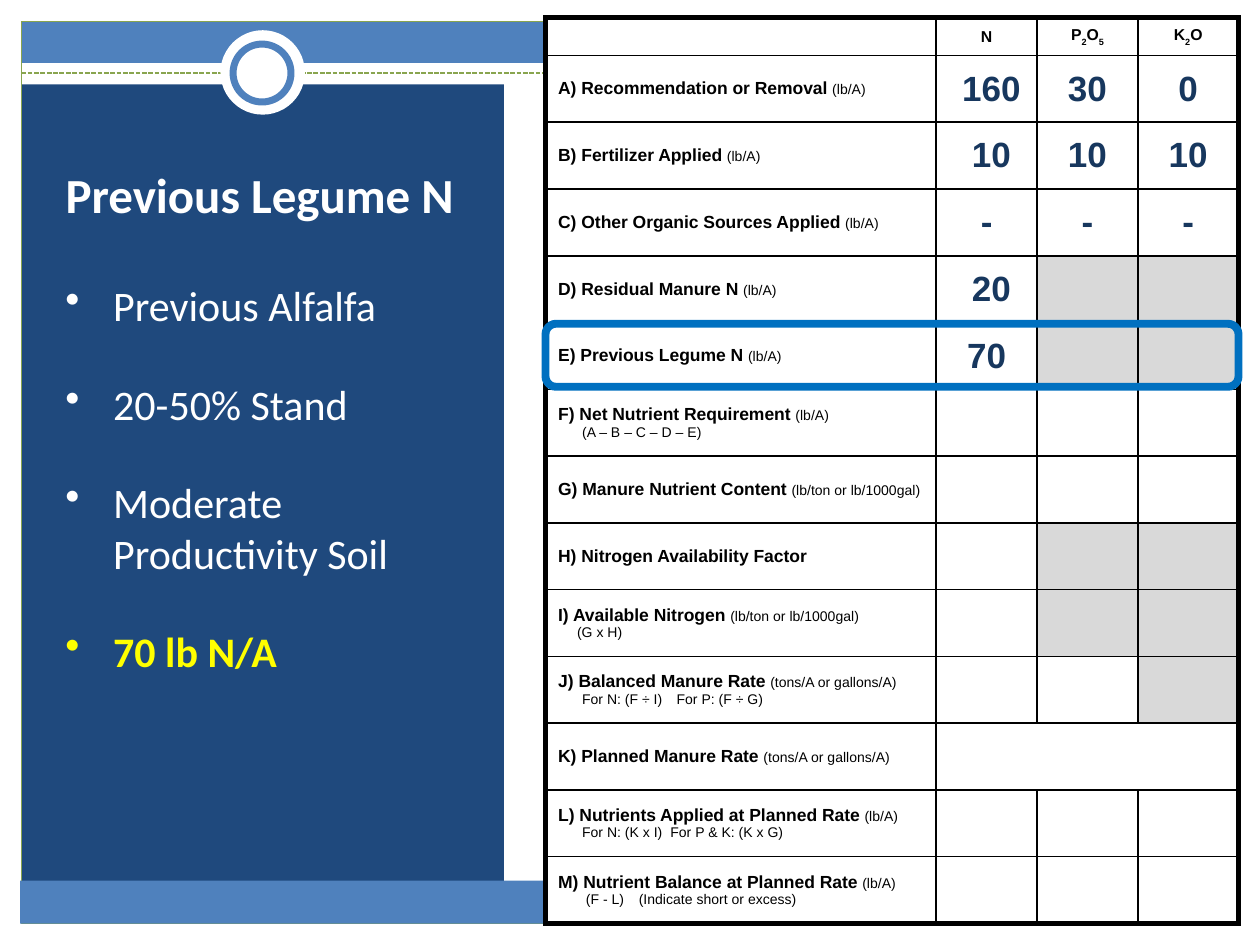
import pptx
import pptx.dml.color
import pptx.enum.dml
import pptx.enum.shapes
import pptx.enum.text
import pptx.oxml.ns
import pptx.util
from lxml import etree

Inches, Pt = pptx.util.Inches, pptx.util.Pt
Shape = pptx.enum.shapes.MSO_SHAPE
Align = pptx.enum.text.PP_ALIGN
Anchor = pptx.enum.text.MSO_ANCHOR
qn = pptx.oxml.ns.qn

BLUE, NAVY, GREEN, WHITE, BLACK = "4F81BD", "1F497D", "89A54F", "FFFFFF", "000000"
AMOUNT, GREY, YELLOW, HIGHLIGHT = "17375E", "D9D9D9", "FFFF00", "0070C0"

LB, PER_TON, MANURE = "(lb/A)", "(lb/ton or lb/1000gal)", "(tons/A or gallons/A)"
BULLETS = ["Previous Alfalfa", "20-50% Stand", "Moderate Productivity Soil", "70 lb N/A"]
# Digits in the headings are subscripts.
NUTRIENTS = ["N", "P2O5", "K2O"]
# Label, unit, note, tab stops of the note, amounts, number of grey cells at the right
WORKSHEET = [
    ("A) Recommendation or Removal ", LB, "", (), (" 160", "30", "0"), 0),
    ("B) Fertilizer Applied ", LB, "", (), (" 10", "10", "10"), 0),
    ("C) Other Organic Sources Applied ", LB, "", (), ("-", "-", "-"), 0),
    ("D) Residual Manure N ", LB, "", (), (" 20",), 2),
    ("E) Previous Legume N ", LB, "", (), ("70",), 2),
    ("F) Net Nutrient Requirement ", LB, "\t(A – B – C – D – E)", (0.19,), (), 0),
    ("G) Manure Nutrient Content ", PER_TON, "", (), (), 0),
    ("H) Nitrogen Availability Factor", "", "", (), (), 2),
    ("I) Available Nitrogen ", PER_TON, "\t(G x H)", (0.15,), (), 2),
    ("J) Balanced Manure Rate ", MANURE, "\tFor N: (F ÷ I)\tFor P: (F ÷ G)", (0.19, 0.94), (), 1),
    ("K) Planned Manure Rate ", MANURE, "", (), (), 0),
    ("L) Nutrients Applied at Planned Rate ", LB,
     "\tFor N: (K x I)\tFor P & K: (K x G)", (0.19, 0.89), (), 0),
    ("M) Nutrient Balance at Planned Rate ", LB,
     "\t(F - L)\t(Indicate short or excess)", (0.22, 0.64), (), 0),
]
PLANNED_RATE_ROW = 11


def rgb(value):
    return pptx.dml.color.RGBColor.from_string(value)


def style(font, name, size, color, bold=False):
    font.name, font.size, font.bold = name, Pt(size), bold
    font.color.rgb = rgb(color)


def set_end_size(paragraph, size):
    """Size the paragraph mark, which sets the bullet and the height of an empty line."""
    etree.SubElement(paragraph._p, qn("a:endParaRPr"), sz=str(size * 100))


def set_tabs(paragraph, stops):
    tabs = etree.SubElement(paragraph._p.get_or_add_pPr(), qn("a:tabLst"))
    for stop in stops:
        etree.SubElement(tabs, qn("a:tab"), pos=str(Inches(stop)), algn="l")


def set_borders(cell, widths):
    """Draw black borders; widths maps the side letters L, R, T and B to points."""
    properties = cell._tc.get_or_add_tcPr()
    for index, (side, width) in enumerate(widths.items()):
        border = etree.Element(qn("a:ln" + side), w=str(Pt(width)))
        fill = etree.SubElement(border, qn("a:solidFill"))
        etree.SubElement(fill, qn("a:srgbClr"), val=BLACK)
        properties.insert(index, border)


class WorksheetSlide:
    """Holds the slide and the fonts of its two halves."""
    panel_font = "Calibri"
    table_font = "Arial"

    def __init__(self, presentation):
        self.slide = presentation.slides.add_slide(presentation.slide_layouts[5])
        self.shapes = self.slide.shapes

    def shape(self, kind, left, top, width, height, fill=None, line=None, weight=0.75):
        shape = self.shapes.add_shape(kind, *map(Inches, (left, top, width, height)))
        shape.shadow.inherit = False
        if fill:
            shape.fill.solid()
            shape.fill.fore_color.rgb = rgb(fill)
        else:
            shape.fill.background()
        if line:
            shape.line.color.rgb = rgb(line)
            shape.line.width = Pt(weight)
        else:
            shape.line.fill.background()

    def dashed_line(self, left, right, y, color, weight):
        line = self.shapes.add_connector(
            pptx.enum.shapes.MSO_CONNECTOR.STRAIGHT,
            Inches(left), Inches(y), Inches(right), Inches(y))
        line.line.color.rgb = rgb(color)
        line.line.width = Pt(weight)
        line.line.dash_style = pptx.enum.dml.MSO_LINE.SQUARE_DOT
        etree.SubElement(line._element.spPr, qn("a:effectLst"))

    def title(self, text, left, top, width, height):
        title = self.shapes.title
        title.left, title.top, title.width, title.height = map(
            Inches, (left, top, width, height))
        title.element.getparent().append(title.element)  # in front of the panel
        frame = title.text_frame
        frame.text = text
        frame.auto_size = pptx.enum.text.MSO_AUTO_SIZE.NONE
        frame.vertical_anchor = Anchor.MIDDLE
        frame.paragraphs[0].alignment = Align.LEFT
        style(frame.paragraphs[0].font, self.panel_font, 28, WHITE, True)

    def bullets(self, items, left, top, width, height):
        """List the items, the last one being the highlighted result."""
        frame = self.shapes.add_textbox(*map(Inches, (left, top, width, height))).text_frame
        frame.word_wrap = True
        for index, item in enumerate(items):
            paragraph = frame.paragraphs[0] if index == 0 else frame.add_paragraph()
            paragraph.text = item
            paragraph.space_after = Pt(27.5)
            is_result = item == items[-1]
            style(paragraph.font, self.panel_font, 24, YELLOW if is_result else WHITE, is_result)
            set_end_size(paragraph, 24)
            properties = paragraph._p.get_or_add_pPr()
            properties.set("marL", str(Inches(0.38)))
            properties.set("indent", str(-Inches(0.38)))
            bullet = etree.Element(qn("a:buChar"), char="•")
            properties.find(qn("a:defRPr")).addprevious(bullet)

    def heading(self, cell, text):
        paragraph = cell.text_frame.paragraphs[0]
        paragraph.alignment = Align.CENTER
        for symbol in text:
            run = paragraph.add_run()
            run.text = symbol
            style(run.font, self.table_font, 9, BLACK, True)
            if symbol.isdigit():
                run._r.get_or_add_rPr().set("baseline", "-30000")

    def label(self, cell, name, unit, note, stops):
        paragraph = cell.text_frame.paragraphs[0]
        for text, size, bold in ((name, 10, True), (unit, 8, False)):
            if text:
                run = paragraph.add_run()
                run.text = text
                style(run.font, self.table_font, size, BLACK, bold)
        if note:
            paragraph = cell.text_frame.add_paragraph()
            set_tabs(paragraph, stops)
            run = paragraph.add_run()
            run.text = note
            style(run.font, self.table_font, 8, BLACK)

    def amount(self, cell, text):
        paragraph = cell.text_frame.paragraphs[0]
        paragraph.text = text
        paragraph.alignment = Align.CENTER
        style(paragraph.font, self.table_font, 20, AMOUNT, True)

    def worksheet(self, left, top, width, height):
        table = self.shapes.add_table(
            len(WORKSHEET) + 1, 4, *map(Inches, (left, top, width, height))).table
        table.first_row = table.horz_banding = False
        for column, size in zip(table.columns, (3.1, 0.8, 0.8, 0.8)):
            column.width = Inches(size)
        for index, row in enumerate(table.rows):
            row.height = Inches(0.53 if index else 0.3)
        table.cell(PLANNED_RATE_ROW, 1).merge(table.cell(PLANNED_RATE_ROW, 3))

        set_end_size(table.cell(0, 0).text_frame.paragraphs[0], 9)
        for column, nutrient in enumerate(NUTRIENTS, 1):
            self.heading(table.cell(0, column), nutrient)
        for row, (name, unit, note, stops, amounts, _) in enumerate(WORKSHEET, 1):
            self.label(table.cell(row, 0), name, unit, note, stops)
            for column, amount in enumerate(amounts, 1):
                self.amount(table.cell(row, column), amount)

        grey_counts = [0] + [entry[-1] for entry in WORKSHEET]
        for row, grey_count in enumerate(grey_counts):
            for column in range(4):
                cell = table.cell(row, column)
                cell.vertical_anchor = Anchor.MIDDLE
                cell.fill.solid()
                cell.fill.fore_color.rgb = rgb(GREY if column >= 4 - grey_count else WHITE)
                set_borders(cell, {
                    "L": 3 if column == 0 else 1,
                    "R": 3 if column + cell.span_width == 4 else 1,
                    "T": 3 if row == 0 else 1,
                    "B": 3 if row == len(WORKSHEET) else 1})


def main():
    presentation = pptx.Presentation()
    presentation.slide_width, presentation.slide_height = Inches(10), Inches(7.5)
    page = WorksheetSlide(presentation)
    page.shape(Shape.RECTANGLE, 0.17, 0.17, 9.66, 0.33, BLUE)
    page.shape(Shape.RECTANGLE, 0.17, 0.67, 3.83, 6.42, NAVY)
    page.shape(Shape.RECTANGLE, 0.17, 0.17, 9.66, 7.16, line=GREEN)
    page.dashed_line(0.17, 9.83, 0.58, GREEN, 0.9)
    page.shape(Shape.OVAL, 1.75, 0.24, 0.67, 0.67, WHITE)
    page.shape(Shape.OVAL, 1.85, 0.35, 0.46, 0.46, WHITE, BLUE, 4)
    page.shape(Shape.RECTANGLE, 0.16, 6.99, 9.66, 0.34, BLUE)
    page.title("Previous Legume N", 0.42, 1, 3.32, 1.08)
    page.bullets(BULLETS, 0.42, 2.17, 3.32, 4.53)
    page.worksheet(4.33, 0.14, 5.5, 7.19)
    page.shape(Shape.ROUNDED_RECTANGLE, 4.33, 2.57, 5.5, 0.5, line=HIGHLIGHT, weight=4.5)
    presentation.save("out.pptx")


if __name__ == "__main__":
    main()
